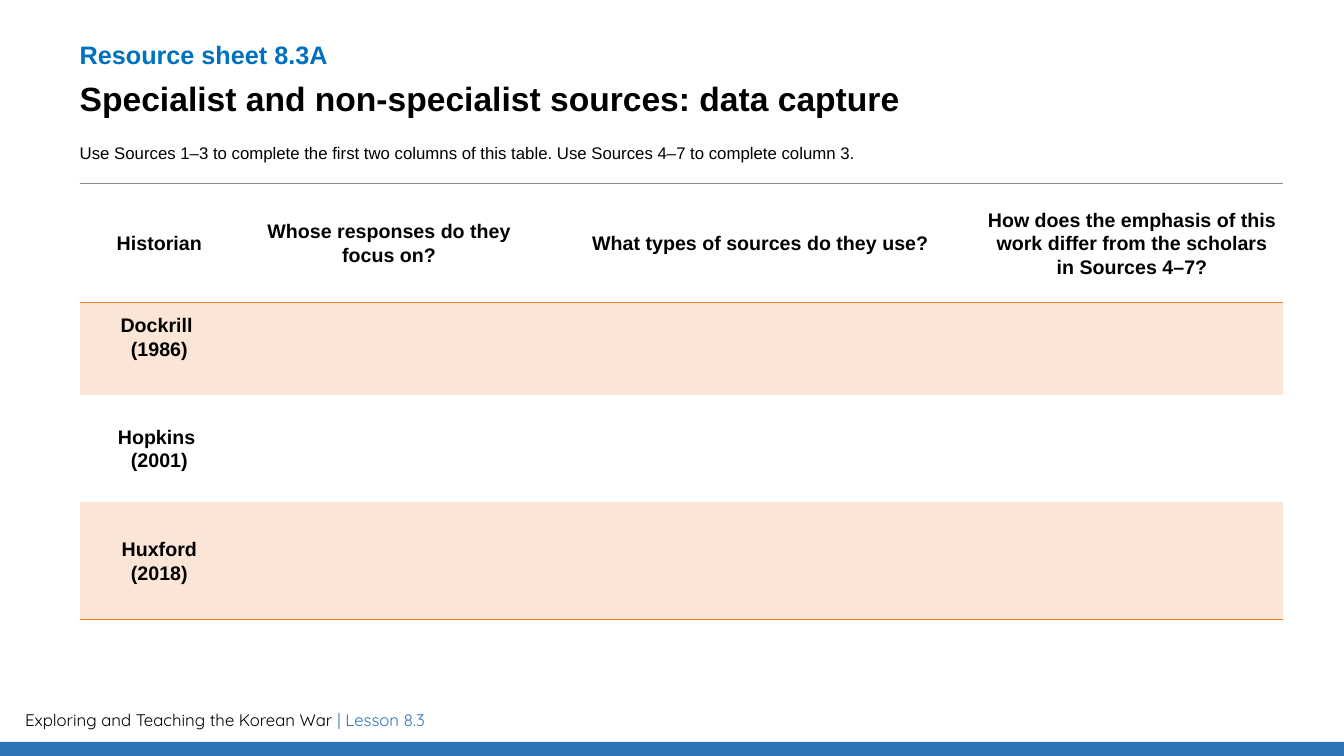
"""Build the data capture resource sheet for lesson 8.3."""
from dataclasses import dataclass
from typing import Optional

from pptx import Presentation
from pptx.dml.color import RGBColor
from pptx.enum.shapes import MSO_SHAPE as Preset
from pptx.enum.text import MSO_ANCHOR as Anchor, MSO_AUTO_SIZE as AutoSize, PP_ALIGN as Align
from pptx.oxml import parse_xml
from pptx.oxml.ns import nsdecls
from pptx.util import Emu, Inches, Pt


@dataclass(frozen=True)
class Theme:
    black: str = "000000"
    heading: str = "0070C0"
    footer: str = "2E75B6"
    rule: str = "ED7D31"
    top_rule: str = "8C8C8C"
    band: str = "FBE5D6"
    font: str = "Arial"
    footer_font: str = "Quicksand"
    small: int = 12
    cell: int = 14
    label: int = 18
    title: int = 24


@dataclass(frozen=True)
class Frame:
    """A rectangle in percent of the slide's width and height."""
    left: float
    top: float
    width: float
    height: float


@dataclass(frozen=True)
class TableRow:
    height: float
    texts: tuple[str, ...]
    banded: bool = False
    top: Optional[str] = None
    bottom: Optional[str] = None
    lift: float = 0


THEME = Theme()
WIDTH, HEIGHT = Inches(13.33), Inches(7.5)
LEFT = 5.93
TITLE = Frame(LEFT, 5.2, 72.3, 9.87)
INSTRUCTION = Frame(LEFT, 18.4, 79.74, 4.13)
FOOTER = Frame(1.13, 93.2, 58.66, 4)
BAR = Frame(0, 98.13, 100, 1.87)
TABLE_TOP = 24.27
COLUMNS = (11.85, 22.35, 32.9, 22.4)
ROWS = (
    TableRow(15.8, ("Historian", "Whose responses do they focus on?",
                    "What types of sources do they use?",
                    "How does the emphasis of this work differ from the scholars in Sources 4–7?"),
             top=THEME.top_rule, bottom=THEME.rule),
    TableRow(12.13, ("Dockrill \n(1986)",), banded=True, lift=0.23),
    TableRow(14.27, ("Hopkins \n(2001)",)),
    TableRow(15.47, ("Huxford\n(2018)",), banded=True, bottom=THEME.rule),
)
NO_STYLE = "{2D5ABB26-0587-4C30-8999-92F81FD0307C}"


def across(percent: float) -> Emu:
    """Convert a share of the slide's width."""
    return Emu(round(WIDTH * percent / 100))


def down(percent: float) -> Emu:
    """Convert a share of the slide's height."""
    return Emu(round(HEIGHT * percent / 100))


def box(frame: Frame) -> tuple[Emu, Emu, Emu, Emu]:
    """Turn a frame into left, top, width and height."""
    return across(frame.left), down(frame.top), across(frame.width), down(frame.height)


def style_font(font, size: int, color: str, bold: bool = False, name: str = THEME.font) -> None:
    """Set the look of a paragraph's or run's font."""
    font.name, font.size, font.bold = name, Pt(size), bold
    font.color.rgb = RGBColor.from_string(color)


def clear_margins(text_frame) -> None:
    """Make a wrapping text frame without insets."""
    text_frame.word_wrap = True
    text_frame.margin_left = text_frame.margin_right = 0
    text_frame.margin_top = text_frame.margin_bottom = 0


def add_title(slide) -> None:
    """Place the two-line heading in the title placeholder."""
    shape = slide.shapes.title
    shape.left, shape.top, shape.width, shape.height = box(TITLE)
    text_frame = shape.text_frame
    text_frame.text = "Resource sheet 8.3A\nSpecialist and non-specialist sources: data capture"
    clear_margins(text_frame)
    text_frame.auto_size = AutoSize.NONE
    text_frame.vertical_anchor = Anchor.TOP
    label, heading = text_frame.paragraphs
    label.alignment = heading.alignment = Align.LEFT
    heading.line_spacing = 1.2
    style_font(label.font, THEME.label, THEME.heading, bold=True)
    style_font(heading.font, THEME.title, THEME.black, bold=True)


def add_instruction(slide) -> None:
    """Add the line that explains the task."""
    text_frame = slide.shapes.add_textbox(*box(INSTRUCTION)).text_frame
    clear_margins(text_frame)
    paragraph = text_frame.paragraphs[0]
    paragraph.text = ("Use Sources 1–3 to complete the first two columns of this table. "
                      "Use Sources 4–7 to complete column 3.")
    paragraph.line_spacing = 1.2
    style_font(paragraph.font, THEME.small, THEME.black)


def add_border(cell, side: str, color: str) -> None:
    """Draw a one-point border on one side of a cell."""
    width = Pt(1) if color == THEME.rule else Pt(0.5)
    cell._tc.get_or_add_tcPr().append(parse_xml(
        f'<a:{side} {nsdecls("a")} w="{width}"><a:solidFill><a:srgbClr val="{color}"/>'
        f'</a:solidFill></a:{side}>'))


def format_cell(cell, row: TableRow, text: str) -> None:
    """Fill one cell with its text, borders and background."""
    cell.margin_left = cell.margin_right = Inches(0.05)
    cell.margin_top, cell.margin_bottom = 0, Inches(row.lift)
    cell.vertical_anchor = Anchor.MIDDLE
    for side, color in (("lnT", row.top), ("lnB", row.bottom)):
        if color:
            add_border(cell, side, color)
    if row.banded:
        cell.fill.solid()
        cell.fill.fore_color.rgb = RGBColor.from_string(THEME.band)
    else:
        cell.fill.background()
    cell.text = text
    for paragraph in cell.text_frame.paragraphs:
        paragraph.alignment = Align.CENTER
        paragraph.line_spacing = 1.07
        style_font(paragraph.font, THEME.cell, THEME.black, bold=True)


def add_capture_table(slide) -> None:
    """Add the table that pupils complete."""
    frame = Frame(LEFT, TABLE_TOP, sum(COLUMNS), sum(row.height for row in ROWS))
    table = slide.shapes.add_table(len(ROWS), len(COLUMNS), *box(frame)).table
    table.horz_banding = False
    table._tbl.tblPr.find("{*}tableStyleId").text = NO_STYLE
    for column, width in zip(table.columns, COLUMNS):
        column.width = across(width)
    for index, row in enumerate(ROWS):
        table.rows[index].height = down(row.height)
        for position in range(len(COLUMNS)):
            text = row.texts[position] if position < len(row.texts) else ""
            format_cell(table.cell(index, position), row, text)


def add_footer(slide) -> None:
    """Add the course line and the bar along the bottom edge."""
    text_frame = slide.shapes.add_textbox(*box(FOOTER)).text_frame
    text_frame.word_wrap = True
    paragraph = text_frame.paragraphs[0]
    for text, color in (("Exploring and Teaching the Korean War ", THEME.black),
                        ("| Lesson 8.3", THEME.footer)):
        run = paragraph.add_run()
        run.text = text
        style_font(run.font, THEME.small, color, name=THEME.footer_font)
    bar = slide.shapes.add_shape(Preset.RECTANGLE, *box(BAR))
    bar.shadow.inherit = False
    bar.fill.solid()
    bar.fill.fore_color.rgb = RGBColor.from_string(THEME.footer)
    bar.line.fill.background()


def main() -> None:
    """Build and save the presentation."""
    presentation = Presentation()
    presentation.slide_width, presentation.slide_height = WIDTH, HEIGHT
    slide = presentation.slides.add_slide(presentation.slide_layouts[5])
    add_footer(slide)
    add_instruction(slide)
    add_capture_table(slide)
    add_title(slide)
    presentation.save("out.pptx")


if __name__ == "__main__":
    main()
